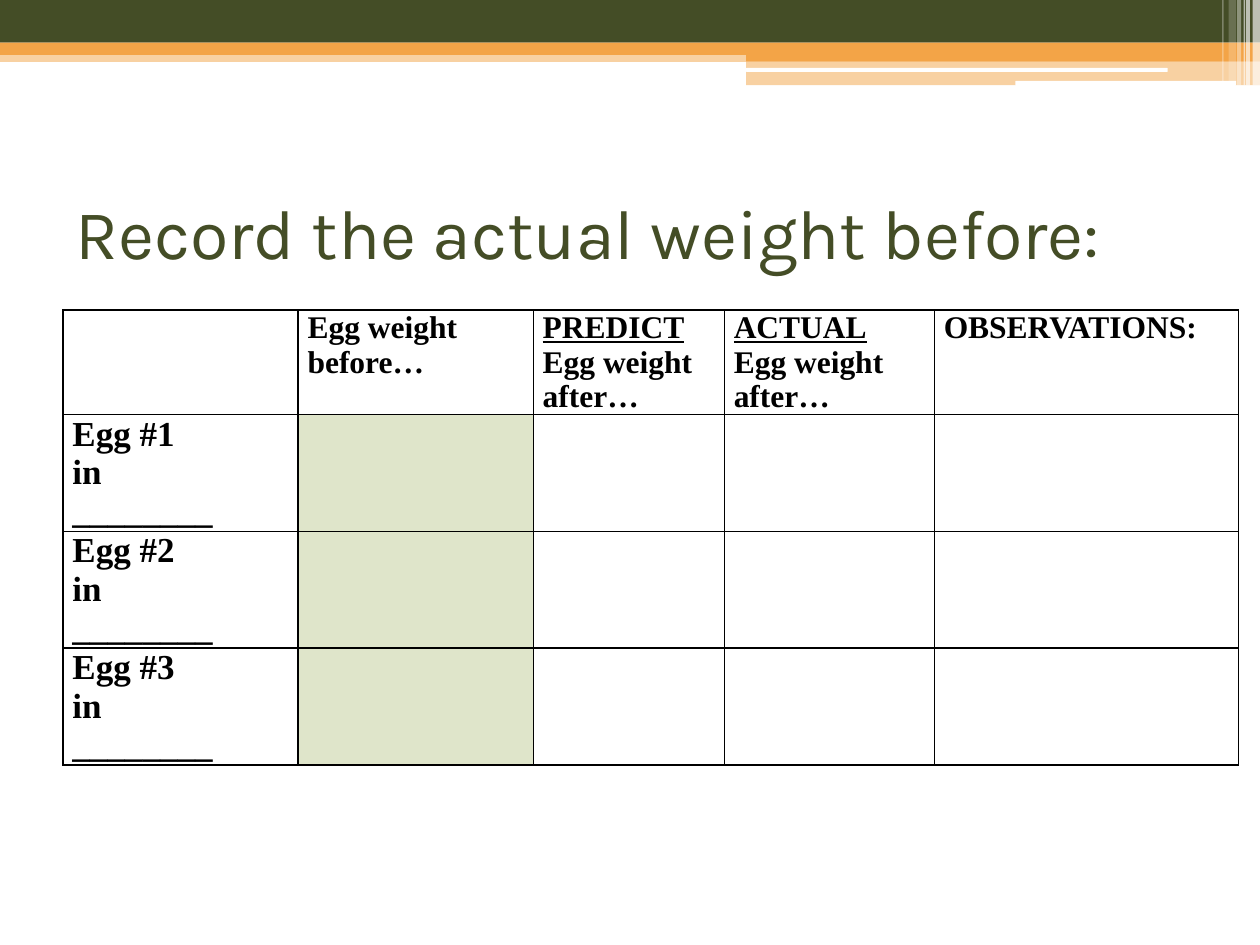
import lxml.etree
import pptx
import pptx.dml.color
import pptx.enum.shapes
import pptx.enum.text
import pptx.oxml.ns
import pptx.util
from pptx.util import Cm

OLIVE, ORANGE, WHITE, BLACK, SAGE = "444D26", "F3A447", "FFFFFF", "000000", "DFE5CA"
RECT = pptx.enum.shapes.MSO_SHAPE.RECTANGLE
ROUNDED = pptx.enum.shapes.MSO_SHAPE.ROUNDED_RECTANGLE
qn = pptx.oxml.ns.qn


def color(hex_code):
    return pptx.dml.color.RGBColor.from_string(hex_code)


def paint(target, hex_code):
    target.fill.solid()
    target.fill.fore_color.rgb = color(hex_code)


def add_bar(slide, left, top, width, height, hex_code, opacity=100, outline=RECT):
    bar = slide.shapes.add_shape(outline, Cm(left), Cm(top), Cm(width), Cm(height))
    bar.shadow.inherit = False
    paint(bar, hex_code)
    bar.line.fill.background()
    if opacity < 100:
        srgb = bar._element.spPr.find(qn("a:solidFill")).find(qn("a:srgbClr"))
        lxml.etree.SubElement(srgb, qn("a:alpha"), val=str(opacity * 1000))


def add_banner(slide, left, top, width):
    """Layered stripes, a stepped block at the right and thin light slits."""
    add_bar(slide, left, top + 1.02, width, 0.23, ORANGE, 50)
    add_bar(slide, left, top, width, 0.86, OLIVE)
    add_bar(slide, left, top + 0.86, width, 0.25, ORANGE)

    block_width = 10.36
    block_left = left + width - block_width
    add_bar(slide, block_left, top + 0.99, block_width, 0.24, ORANGE)
    add_bar(slide, block_left, top + 1.22, block_width, 0.5, ORANGE, 50)
    add_bar(slide, block_left, top + 1.37, 8.5, 0.08, WHITE, outline=ROUNDED)
    add_bar(slide, block_left + 5.43, top + 1.63, 4.45, 0.1, WHITE, outline=ROUNDED)

    slits = [(0.15, 0.15, 1.73, 65), (0.28, 0.08, 1.73, 65), (0.33, 0.03, 1.73, 60),
             (0.46, 0.08, 1.73, 40), (0.63, 0.15, 1.63, 20), (0.76, 0.03, 1.63, 30)]
    for from_right, slit_width, height, opacity in slits:
        add_bar(slide, left + width - from_right, top, slit_width, height, WHITE, opacity)


def format_title(slide, left, top, width, height):
    title = slide.shapes.title
    title.left, title.top, title.width, title.height = map(Cm, (left, top, width, height))
    frame = title.text_frame
    frame.text = "Record the actual weight before:"
    frame.word_wrap = True
    frame.vertical_anchor = pptx.enum.text.MSO_ANCHOR.MIDDLE
    frame.paragraphs[0].alignment = pptx.enum.text.PP_ALIGN.LEFT
    font = frame.paragraphs[0].runs[0].font
    font.name, font.size = "Karla", pptx.util.Pt(40)
    font.color.rgb = color(OLIVE)


def add_borders(cell):
    properties = cell._tc.get_or_add_tcPr()
    for position, side in enumerate(("lnL", "lnR", "lnT", "lnB")):
        line = lxml.etree.Element(qn(f"a:{side}"), w=str(pptx.util.Pt(1)))
        solid = lxml.etree.SubElement(line, qn("a:solidFill"))
        lxml.etree.SubElement(solid, qn("a:srgbClr"), val=BLACK)
        properties.insert(position, line)


def fill_cell(cell, lines, size, underlined):
    cell.margin_left = cell.margin_right = Cm(0.19)
    cell.margin_top = cell.margin_bottom = 0
    cell.text_frame.text = "\n".join(lines)
    for paragraph in cell.text_frame.paragraphs:
        for run in paragraph.runs:
            run.font.name, run.font.size = "Times New Roman", pptx.util.Pt(size)
            run.font.bold = True
            run.font.underline = run.text in underlined
            run.font.color.rgb = color(BLACK)


def add_record_table(slide, left, top, width, height):
    headings = [[], ["Egg weight before…"], ["PREDICT", "Egg weight after…"],
                ["ACTUAL", "Egg weight after…"], ["OBSERVATIONS:"]]
    eggs = [[[f"Egg #{number}", "in", "________"], [], [], [], []] for number in (1, 2, 3)]
    rows = [headings] + eggs
    table = slide.shapes.add_table(len(rows), len(headings), Cm(left), Cm(top),
                                   Cm(width), Cm(height)).table

    shares = [1.87, 1.87, 1.52, 1.67, 2.42]
    for column, share in zip(table.columns, shares):
        column.width = Cm(width * share / sum(shares))
    header_height = 2.1
    for index, row in enumerate(table.rows):
        row.height = Cm((height - header_height) / len(eggs) if index else header_height)

    for row_index, row in enumerate(rows):
        for column_index, lines in enumerate(row):
            cell = table.cell(row_index, column_index)
            fill_cell(cell, lines, 20 if row_index else 18, ("PREDICT", "ACTUAL"))
            to_record = row_index > 0 and column_index == 1
            paint(cell, SAGE if to_record else WHITE)
            add_borders(cell)


def main():
    deck = pptx.Presentation()
    deck.slide_width, deck.slide_height = Cm(25.4), Cm(19.05)
    slide = deck.slides.add_slide(deck.slide_layouts.get_by_name("Title Only"))
    add_banner(slide, 0, 0, 25.4)
    format_title(slide, 1.27, 3.18, 22.86, 2.97)
    add_record_table(slide, 1.27, 6.25, 23.7, 9.16)
    deck.save("out.pptx")


if __name__ == "__main__":
    main()
